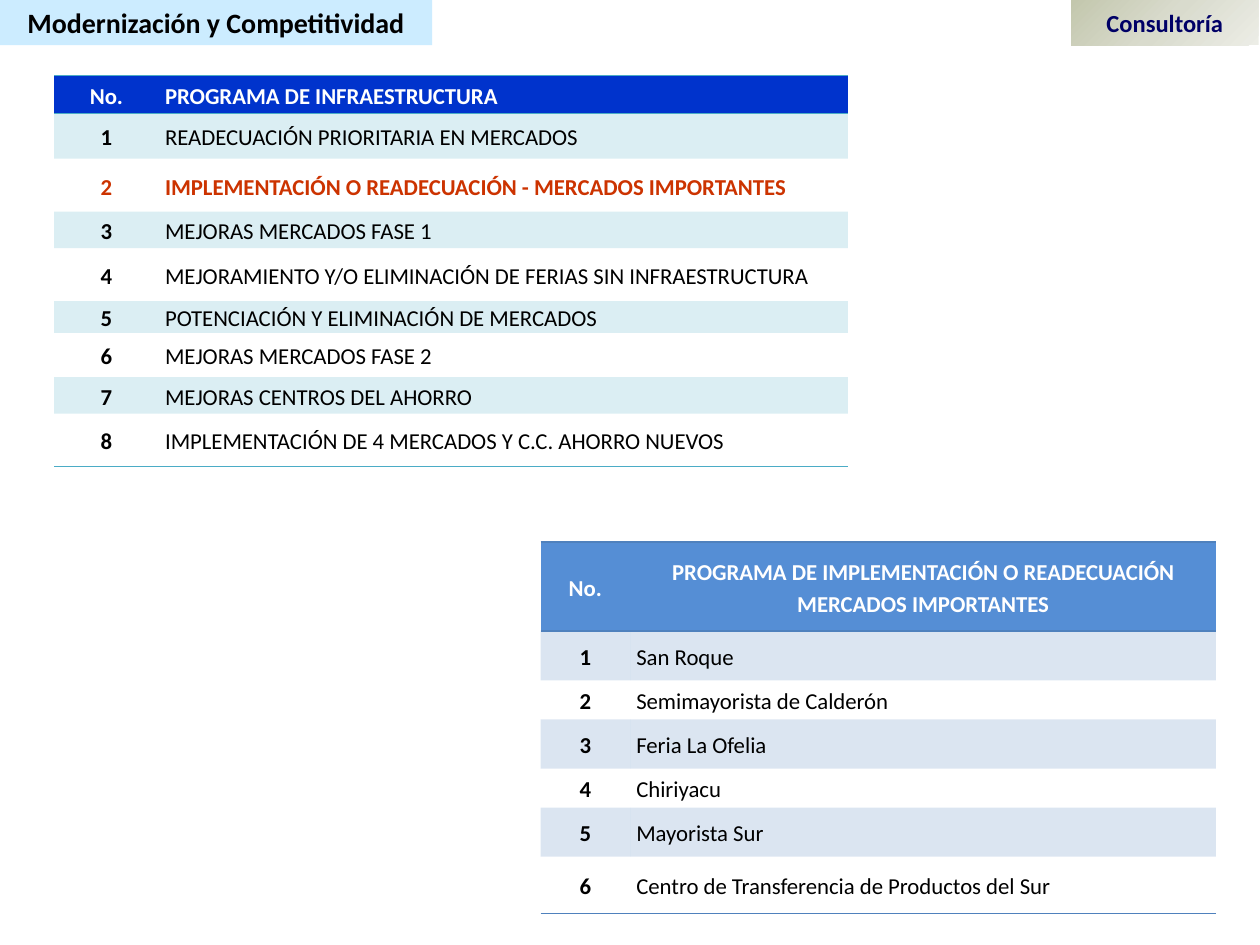
from lxml import etree
from pptx import Presentation
from pptx.dml.color import RGBColor
from pptx.enum.shapes import MSO_SHAPE
from pptx.enum.text import MSO_ANCHOR, PP_ALIGN
from pptx.oxml.ns import qn
from pptx.util import Inches, Pt

RECTANGLE = MSO_SHAPE.RECTANGLE
MIDDLE = MSO_ANCHOR.MIDDLE
CENTER, LEFT = PP_ALIGN.CENTER, PP_ALIGN.LEFT
NO_STYLE_NO_GRID = "{2D5ABB26-0587-4C30-8999-92F81FD0307C}"

COLORS = {
    "white": "FFFFFF", "black": "000000", "red": "CC3300", "navy": "000066",
    "royal": "0033CC", "teal": "4BACC6", "sky": "558ED5", "blue": "4F81BD",
    "title": "CCECFF",
}
SERVICE_STOPS = [(0, "C3C7AD"), (50, "D9DBCD"), (100, "ECEDE6")]


def write(para, text, size, color, bold=True, align=CENTER):
    para.alignment = align
    span = para.add_run()
    span.text = text
    for name, value in {"name": "Calibri", "size": Pt(size), "bold": bold}.items():
        setattr(span.font, name, value)
    span.font.color.rgb = RGBColor.from_string(COLORS[color])


def add_border(cell, side, color):
    line = etree.SubElement(cell._tc.get_or_add_tcPr(), qn(f"a:ln{side}"), w=str(Pt(1)))
    fill = etree.SubElement(line, qn("a:solidFill"))
    etree.SubElement(fill, qn("a:srgbClr"), val=COLORS[color])


deck = Presentation()
deck.slide_width, deck.slide_height = Inches(10), Inches(7.5)
page = deck.slides.add_slide(deck.slide_layouts[6])

# Header labels
headers = [
    ("Consultoría", 8.5, 1.49, 14, "navy"),
    ("Modernización y Competitividad", 0, 3.43, 16, "black"),
]
for text, left, width, size, color in headers:
    box = page.shapes.add_shape(RECTANGLE, Inches(left), 0, Inches(width), Inches(0.36))
    box.shadow.inherit = False
    box.line.fill.background()
    box.text_frame.vertical_anchor = MIDDLE
    write(box.text_frame.paragraphs[0], text, size, color)
    if left == 0:
        box.fill.solid()
        box.fill.fore_color.rgb = RGBColor.from_string(COLORS["title"])
    else:
        # Radial gradient spreading from the top left corner
        box.fill.gradient()
        gradient = box._element.spPr.find(qn("a:gradFill"))
        for child in list(gradient):
            gradient.remove(child)
        stops = etree.SubElement(gradient, qn("a:gsLst"))
        for percent, shade in SERVICE_STOPS:
            stop = etree.SubElement(stops, qn("a:gs"), pos=str(percent * 1000))
            etree.SubElement(stop, qn("a:srgbClr"), val=shade)
        radial = etree.SubElement(gradient, qn("a:path"), {"path": "circle"})
        etree.SubElement(radial, qn("a:fillToRect"), r="100000", b="100000")

# Program tables: header row, then numbered rows with alternate tinted bands
programs = [
    {
        "place": (0.43, 0.6), "columns": (0.83, 5.47),
        "heights": (0.3, 0.36, 0.42, 0.29, 0.42, 0.23, 0.35, 0.29, 0.42),
        "header_fill": "royal", "accent": "teal", "header_align": LEFT, "highlight": 2,
        "names": [
            "PROGRAMA DE INFRAESTRUCTURA",
            "READECUACIÓN PRIORITARIA EN MERCADOS",
            "IMPLEMENTACIÓN O READECUACIÓN - MERCADOS IMPORTANTES",
            "MEJORAS MERCADOS FASE 1",
            "MEJORAMIENTO Y/O ELIMINACIÓN DE FERIAS SIN INFRAESTRUCTURA",
            "POTENCIACIÓN Y ELIMINACIÓN DE MERCADOS",
            "MEJORAS MERCADOS FASE 2",
            "MEJORAS CENTROS DEL AHORRO",
            "IMPLEMENTACIÓN DE 4 MERCADOS Y C.C. AHORRO NUEVOS",
        ],
    },
    {
        "place": (4.29, 4.3), "columns": (0.71, 4.65),
        "heights": (0.71, 0.39, 0.31, 0.39, 0.31, 0.39, 0.45),
        "header_fill": "sky", "accent": "blue", "header_align": CENTER, "highlight": None,
        "names": [
            "PROGRAMA DE IMPLEMENTACIÓN O READECUACIÓN MERCADOS IMPORTANTES",
            "San Roque",
            "Semimayorista de Calderón",
            "Feria La Ofelia",
            "Chiriyacu",
            "Mayorista Sur",
            "Centro de Transferencia de Productos del Sur",
        ],
    },
]
cell_format = {
    "vertical_anchor": MIDDLE, "margin_left": Inches(0.05), "margin_right": Inches(0.05),
    "margin_top": 0, "margin_bottom": 0,
}
for program in programs:
    names, heights, columns = program["names"], program["heights"], program["columns"]
    left, top = program["place"]
    table = page.shapes.add_table(
        len(names), 2, Inches(left), Inches(top), Inches(sum(columns)), Inches(sum(heights))
    ).table
    table._tbl.tblPr.find(qn("a:tableStyleId")).text = NO_STYLE_NO_GRID
    for column, width in zip(table.columns, columns):
        column.width = Inches(width)

    for number, (name, height) in enumerate(zip(names, heights)):
        table.rows[number].height = Inches(height)
        is_header = number == 0
        is_highlight = number == program["highlight"]
        color = "white" if is_header else "red" if is_highlight else "black"
        name_align = program["header_align"] if is_header else LEFT
        entries = [
            ("No." if is_header else str(number), True, CENTER),
            (name, is_header or is_highlight, name_align),
        ]
        sides = "TB" if is_header else "B" if number == len(names) - 1 else ""
        for index, (text, bold, align) in enumerate(entries):
            cell = table.cell(number, index)
            for attribute, value in cell_format.items():
                setattr(cell, attribute, value)
            para = cell.text_frame.paragraphs[0]
            para.line_spacing = 1.15
            write(para, text, 13, color, bold, align)
            for side in sides:
                add_border(cell, side, program["accent"])
            if is_header or number % 2:
                fill_color = program["header_fill" if is_header else "accent"]
                cell.fill.solid()
                cell.fill.fore_color.rgb = RGBColor.from_string(COLORS[fill_color])
                if not is_header:
                    tint = cell._tc.tcPr.find(qn("a:solidFill"))[0]
                    etree.SubElement(tint, qn("a:alpha"), val="20000")
            else:
                cell.fill.background()

deck.save("out.pptx")
